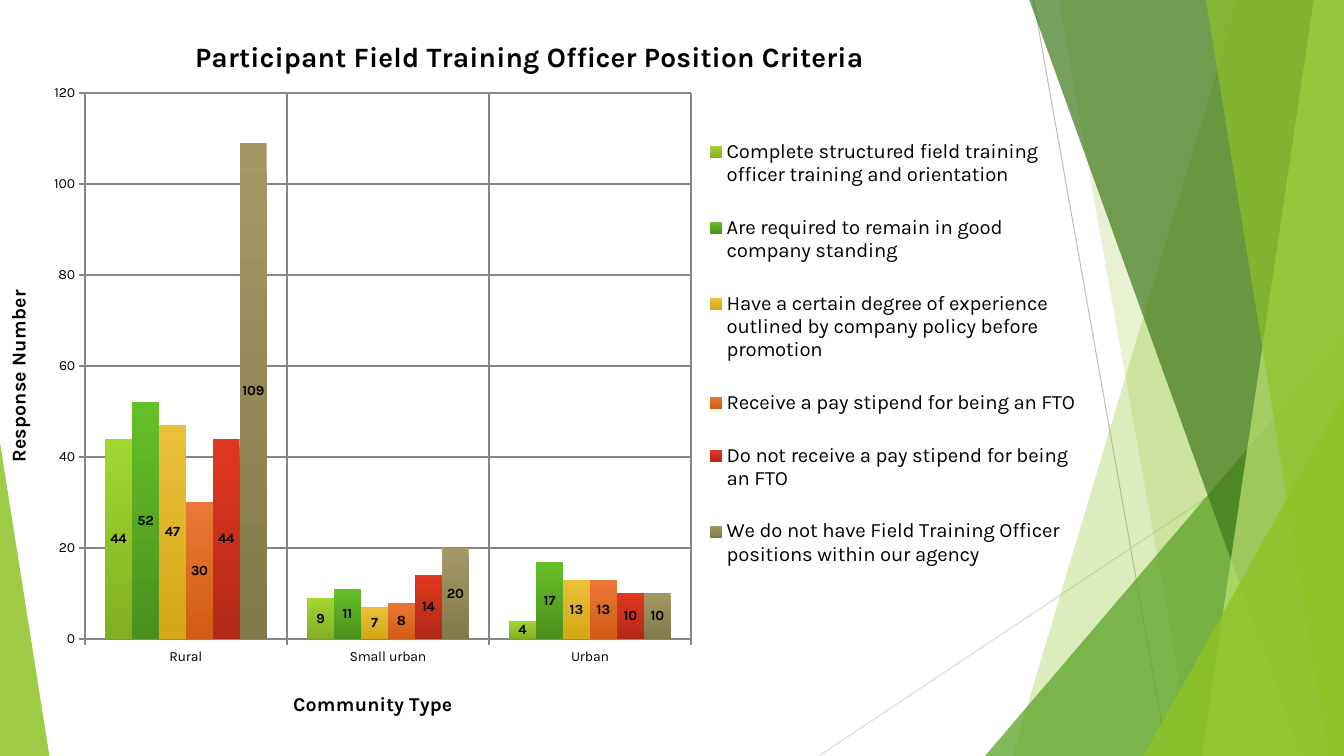
from lxml.etree import SubElement
from pptx import Presentation
from pptx.chart.data import CategoryChartData
from pptx.dml.color import RGBColor
from pptx.enum.chart import XL_CHART_TYPE as ChartType, XL_LABEL_POSITION as LabelPosition
from pptx.enum.chart import XL_LEGEND_POSITION as LegendPosition, XL_TICK_MARK as TickMark
from pptx.enum.shapes import MSO_CONNECTOR as Connector, MSO_SHAPE as Shape
from pptx.oxml.ns import qn
from pptx.util import Inches, Pt

BLACK = RGBColor(0x00, 0x00, 0x00)
GRID_GRAY = RGBColor(0x86, 0x86, 0x86)
MID_GRAY = RGBColor(0xBF, 0xBF, 0xBF)
PALE_GRAY = RGBColor(0xD9, 0xD9, 0xD9)
LIME = RGBColor(0x90, 0xC2, 0x26)
GREEN = RGBColor(0x54, 0xA0, 0x21)
DARK_GREEN = RGBColor(0x3F, 0x78, 0x19)
PALE_LIME = RGBColor(0xC0, 0xE4, 0x74)
GOLD = RGBColor(0xE6, 0xB9, 0x1E)
ORANGE = RGBColor(0xE7, 0x66, 0x18)
RED = RGBColor(0xC4, 0x2F, 0x1A)
OLIVE = RGBColor(0x91, 0x86, 0x55)

COMMUNITIES = ("Rural", "Small urban", "Urban")
CRITERIA = (
    ("Complete structured field training officer training and orientation", (44, 9, 4), LIME),
    ("Are required to remain in good company standing", (52, 11, 17), GREEN),
    ("Have a certain degree of experience outlined by company policy before promotion",
     (47, 7, 13), GOLD),
    ("Receive a pay stipend for being an FTO", (30, 8, 13), ORANGE),
    ("Do not receive a pay stipend for being an FTO", (44, 14, 10), RED),
    ("We do not have Field Training Officer positions within our agency", (109, 20, 10), OLIVE),
)


def style_font(font, size, bold=False):
    font.name, font.size, font.bold = "Karla", Pt(size), bold
    font.color.rgb = BLACK


def write(frame, text, size=14, bold=True):
    span = frame.paragraphs[0].add_run()
    span.text = text
    style_font(span.font, size, bold)


def place(element, index, target=None, **shares):
    """Give a chart part a manual layout, in shares of the chart's size."""
    for old in element.findall(qn("c:layout")):
        element.remove(old)
    layout = element.makeelement(qn("c:layout"))
    element.insert(index, layout)
    manual = SubElement(layout, qn("c:manualLayout"))
    if target:
        SubElement(manual, qn("c:layoutTarget")).set("val", target)
    for side in ("x", "y"):
        SubElement(manual, qn(f"c:{side}Mode")).set("val", "edge")
    for side, share in shares.items():
        SubElement(manual, qn(f"c:{side}")).set("val", str(share))


class SlideBuilder:
    """Draws on one slide; all lengths are percentages of its width and height."""

    def __init__(self, deck):
        self.deck = deck
        self.page = deck.slides.add_slide(deck.slide_layouts[6])
        self.shapes = self.page.shapes

    def across(self, percent):
        return round(self.deck.slide_width * percent / 100)

    def down(self, percent):
        return round(self.deck.slide_height * percent / 100)

    def line(self, x1, y1, x2, y2, color):
        line = self.shapes.add_connector(Connector.STRAIGHT, self.across(x1), self.down(y1),
                                         self.across(x2), self.down(y2))
        line.line.color.rgb, line.line.width = color, Pt(0.75)
        SubElement(line._element.spPr, qn("a:effectLst"))

    def paint(self, shape, color, opacity):
        shape.shadow.inherit = False
        shape.line.fill.background()
        shape.fill.solid()
        shape.fill.fore_color.rgb = color
        tint = shape._element.spPr.find(qn("a:solidFill"))[0]
        SubElement(tint, qn("a:alpha")).set("val", str(opacity * 1000))

    def shard(self, top_x, bottom_x, color, opacity):
        """Fill from a slanted left edge to the right side of the slide."""
        corners = [(self.across(x), self.down(y))
                   for x, y in ((top_x, 0), (100, 0), (100, 100), (bottom_x, 100))]
        outline = self.shapes.build_freeform(*corners[0], scale=1.0)
        outline.add_line_segments(corners[1:], close=True)
        self.paint(outline.convert_to_shape(), color, opacity)

    def corner(self, left, top, width, color, opacity, apex):
        """Draw a triangle standing on the slide's bottom edge."""
        triangle = self.shapes.add_shape(Shape.ISOSCELES_TRIANGLE, self.across(left),
                                         self.down(top), self.across(width),
                                         self.down(100 - top))
        triangle.adjustments[0] = apex
        self.paint(triangle, color, opacity)

    def column_chart(self, left, top, width, height, categories, rows):
        data = CategoryChartData()
        data.categories = categories
        for name, values, _ in rows:
            data.add_series(name, values)
        chart = self.shapes.add_chart(ChartType.COLUMN_CLUSTERED, self.across(left),
                                      self.down(top), self.across(width),
                                      self.down(height), data).chart
        style_font(chart.font, 10)
        plot = chart.plots[0]
        plot.gap_width, plot.overlap, plot.vary_by_categories = 150, 0, False
        for series, (_, _, color) in zip(plot.series, rows):
            self.column_style(series, color)
        return chart

    def column_style(self, series, color):
        fill = series.format.fill
        fill.gradient()
        fill.gradient_angle = 270
        for stop, brightness in zip(fill.gradient_stops, (0.12, -0.1)):
            stop.color.rgb = color
            stop.color.brightness = brightness
        labels = series.data_labels
        labels.show_value, labels.position = True, LabelPosition.CENTER
        style_font(labels.font, 10, bold=True)

    def axis(self, axis, title, **position):
        axis.has_major_gridlines = True
        axis.major_tick_mark = TickMark.OUTSIDE
        style_font(axis.tick_labels.font, 10)
        for line in (axis.format.line, axis.major_gridlines.format.line):
            line.color.rgb, line.width = GRID_GRAY, Pt(1.5)
        write(axis.axis_title.text_frame, title)
        place(axis.axis_title._element, 1, **position)

    def legend(self, chart, size, **position):
        chart.has_legend = True
        chart.legend.position = LegendPosition.RIGHT
        chart.legend.include_in_layout = False
        style_font(chart.legend.font, size)
        place(chart.legend._element, 1, **position)


def main():
    deck = Presentation()
    deck.slide_width, deck.slide_height = Inches(13.33), Inches(7.5)
    slide = SlideBuilder(deck)

    slide.line(76.9, 0, 86.87, 100, MID_GRAY)
    slide.line(100, 53.73, 60.92, 100, PALE_GRAY)
    slide.shard(92.12, 75.32, LIME, 30)
    slide.shard(78.77, 88.75, LIME, 20)
    slide.corner(73.29, 44.4, 26.71, GREEN, 72, apex=1)
    slide.shard(76.59, 96.85, DARK_GREEN, 70)
    slide.shard(97.75, 89.42, PALE_LIME, 70)
    slide.shard(89.72, 98.87, LIME, 65)
    slide.corner(85.07, 52.4, 14.93, LIME, 80, apex=1)
    slide.corner(0, 58.53, 3.68, LIME, 85, apex=0)

    chart = slide.column_chart(-0.68, 3.47, 82.3, 93.07, COMMUNITIES, CRITERIA)
    write(chart.chart_title.text_frame, "Participant Field Training Officer Position Criteria",
          size=20)
    place(chart.chart_title._element, 1, x=0.18, y=0.01)
    slide.axis(chart.category_axis, "Community Type", x=0.27, y=0.94)
    slide.axis(chart.value_axis, "Response Number", x=0.01, y=0.37)
    chart.value_axis.minimum_scale, chart.value_axis.maximum_scale = 0, 120
    chart.value_axis.major_unit = 20
    slide.legend(chart, 14.5, x=0.65, y=0.12, w=0.33, h=0.69)
    place(chart._chartSpace.chart.plotArea, 0, target="inner",
          x=0.085, y=0.095, w=0.548, h=0.776)
    deck.save("out.pptx")


if __name__ == "__main__":
    main()
